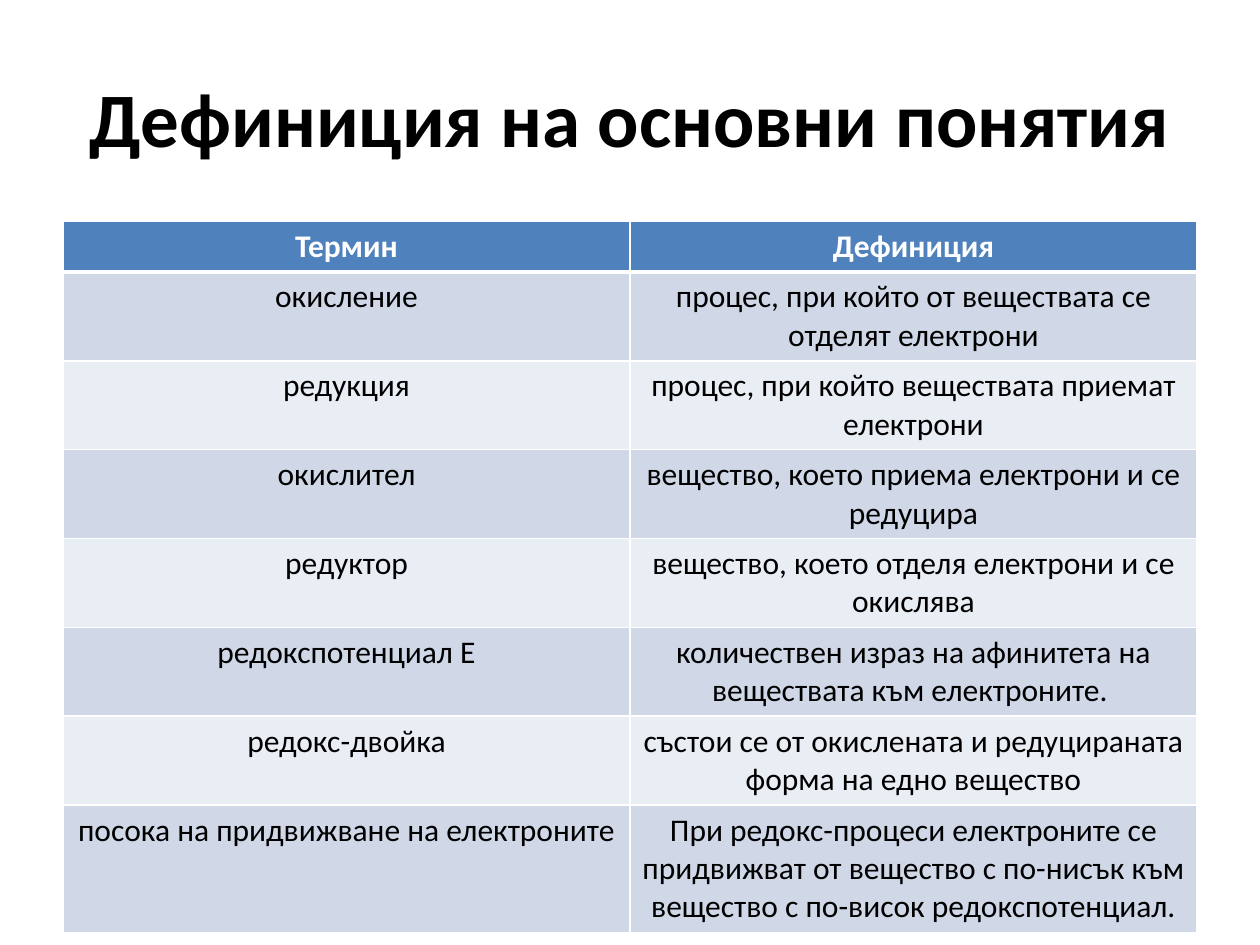
import pptx
import pptx.dml.color
import pptx.enum.text
import pptx.oxml
import pptx.oxml.ns
import pptx.util

PX_PER_INCH = 126
WHITE, BLACK, BLUE = "FFFFFF", "000000", "4F81BD"
BANDS = ["D0D8E8", "E9EDF4"]

ROWS = [
    ("Термин", "Дефиниция"),
    ("окисление", "процес, при който от веществата се отделят електрони"),
    ("редукция", "процес, при който веществата приемат електрони"),
    ("окислител", "вещество, което приема електрони и се редуцира"),
    ("редуктор", "вещество, което отделя електрони и се окислява"),
    ("редокспотенциал E", "количествен израз на афинитета на веществата към електроните. "),
    ("редокс-двойка", "състои се от окислената и редуцираната форма на едно вещество"),
    ("посока на придвижване на електроните",
     "При редокс-процеси електроните се придвижват от вещество с по-нисък "
     "към вещество с по-висок редокспотенциал."),
]


def px(count):
    return pptx.util.Emu(round(count * 914400 / PX_PER_INCH))


def color(value):
    return pptx.dml.color.RGBColor.from_string(value)


def apply(target, values):
    for name, value in values.items():
        setattr(target, name, value)


class SlideBuilder:
    font = "Calibri"
    cell_margin = 6

    def __init__(self, slide):
        self.slide = slide

    def text(self, frame, words, size, ink, bold):
        para = frame.paragraphs[0]
        para.alignment = pptx.enum.text.PP_ALIGN.CENTER
        span = para.add_run()
        span.text = words
        apply(span.font, {"name": self.font, "size": pptx.util.Pt(size), "bold": bold})
        span.font.color.rgb = color(ink)

    def title(self, words, left, top, width, height):
        box = self.slide.shapes.title
        apply(box, {"left": px(left), "top": px(top),
                    "width": px(width), "height": px(height)})
        apply(box.text_frame, {"word_wrap": True,
                               "vertical_anchor": pptx.enum.text.MSO_ANCHOR.MIDDLE})
        self.text(box.text_frame, words, 44, BLACK, True)

    def borders(self, cell, widths):
        properties = cell._tc.get_or_add_tcPr()
        for index, (side, points) in enumerate(widths.items()):
            line = pptx.oxml.parse_xml(
                f'<a:ln{side} {pptx.oxml.ns.nsdecls("a")} w="{pptx.util.Pt(points)}">'
                f'<a:solidFill><a:srgbClr val="{WHITE}"/></a:solidFill></a:ln{side}>')
            properties.insert(index, line)

    def cell(self, cell, words, row):
        header = row == 0
        margin = px(self.cell_margin)
        anchors = pptx.enum.text.MSO_ANCHOR
        apply(cell, {"margin_left": margin, "margin_right": margin,
                     "margin_top": margin, "margin_bottom": margin,
                     "vertical_anchor": anchors.MIDDLE if header else anchors.TOP})
        cell.fill.solid()
        cell.fill.fore_color.rgb = color(BLUE if header else BANDS[(row - 1) % 2])
        self.text(cell.text_frame, words, 18, WHITE if header else BLACK, header)
        self.borders(cell, {"L": 1, "R": 1, "T": 1, "B": 3 if header else 1})

    def table(self, rows, left, top, width, height, row_height):
        frame = self.slide.shapes.add_table(
            len(rows), len(rows[0]), px(left), px(top), px(width), px(height))
        for row, entries in enumerate(rows):
            frame.table.rows[row].height = px(row_height)
            for column, words in enumerate(entries):
                self.cell(frame.table.cell(row, column), words, row)
        frame.height = px(height)


def main():
    deck = pptx.Presentation()
    apply(deck, {"slide_width": px(1260), "slide_height": px(945)})
    page = SlideBuilder(deck.slides.add_slide(deck.slide_layouts[5]))

    # Heading
    page.title("Дефиниция на основни понятия", 63, 38, 1134, 158)

    # Terms and definitions; rows grow to fit their text
    page.table(ROWS, 63, 221, 1134, 709, 51)

    deck.save("out.pptx")


if __name__ == "__main__":
    main()
